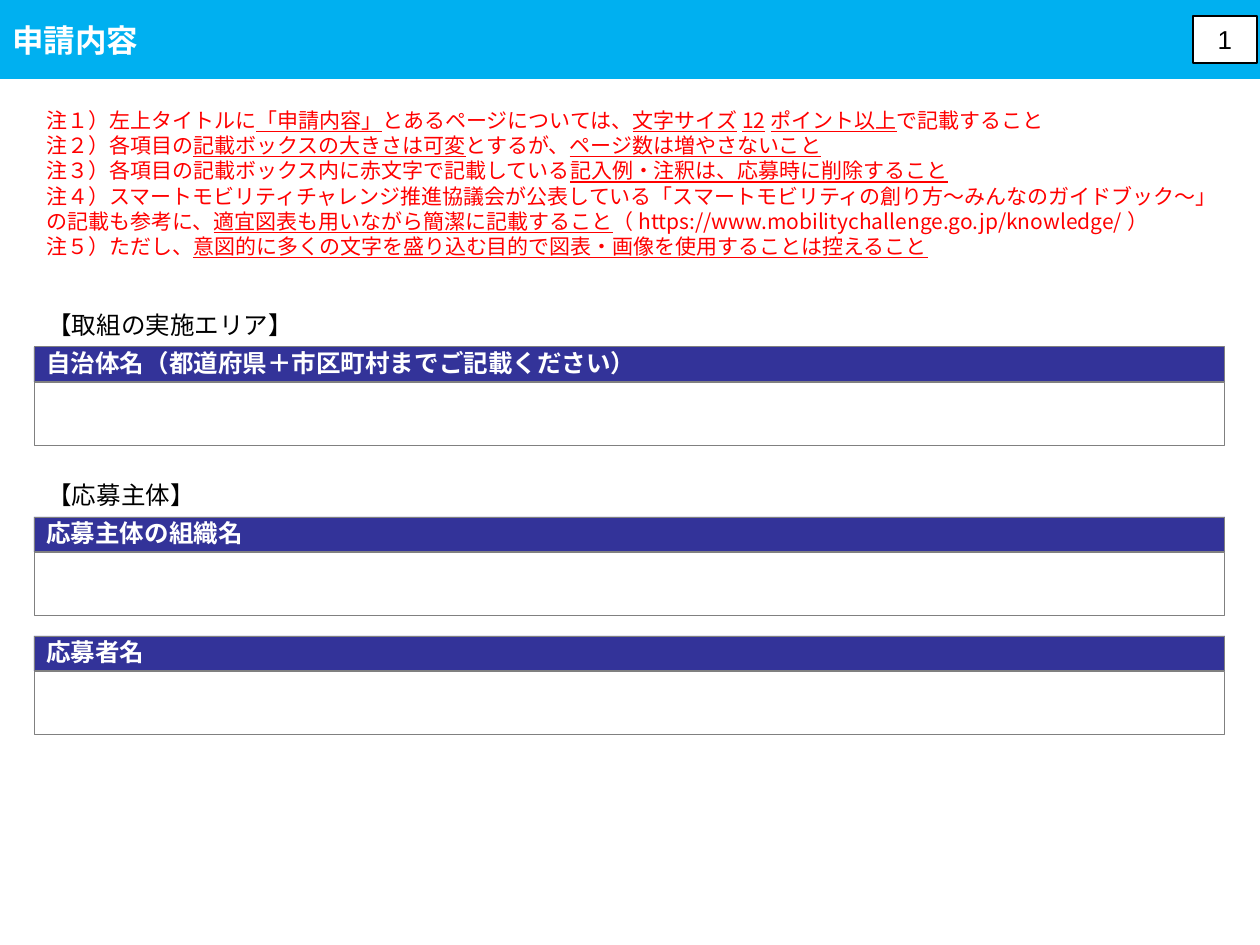
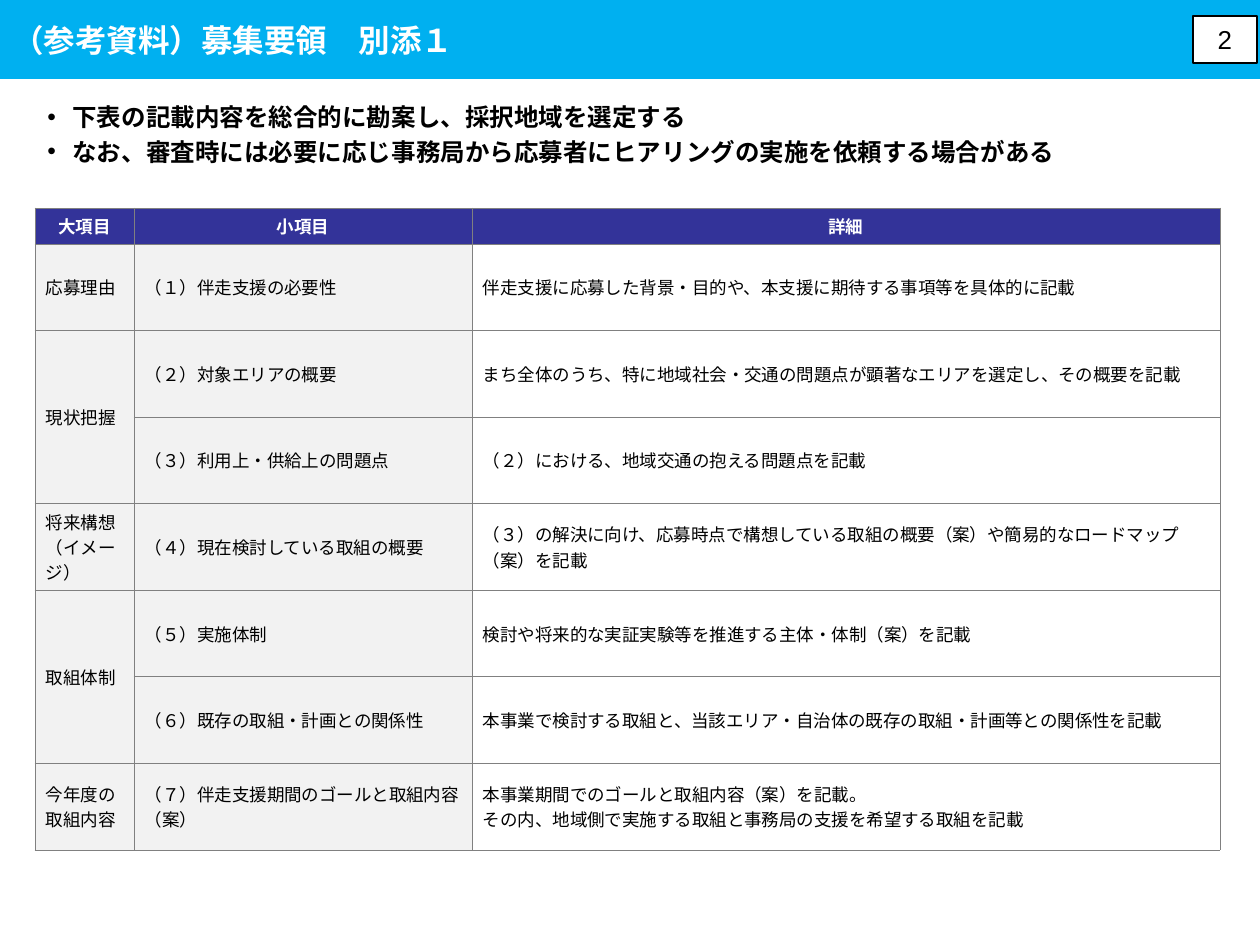
from lxml import etree
from pptx import Presentation
from pptx.dml.color import RGBColor
from pptx.enum.lang import MSO_LANGUAGE_ID
from pptx.enum.shapes import MSO_SHAPE
from pptx.enum.text import MSO_ANCHOR, PP_ALIGN
from pptx.oxml.ns import qn
from pptx.util import Pt

RECTANGLE = MSO_SHAPE.RECTANGLE
TOP, MIDDLE = MSO_ANCHOR.TOP, MSO_ANCHOR.MIDDLE
LEFT, CENTER = PP_ALIGN.LEFT, PP_ALIGN.CENTER
JAPANESE = MSO_LANGUAGE_ID.JAPANESE

PX_PER_INCH = 126
SLIDE_WIDTH, SLIDE_HEIGHT = 1260, 945
GOTHIC, ARIAL = "Noto Sans CJK JP", "Arial"
COLORS = {
    "band": "00B0F0",
    "heading": "333399",
    "label": "F2F2F2",
    "border": "808080",
    "note": "FF0000",
    "white": "FFFFFF",
    "black": "000000",
}

# Text between bars is underlined
NOTES = [
    "注１）左上タイトルに|「申請内容」|とあるページについては、|文字サイズ12ポイント以上|で記載すること",
    "注２）各項目の|記載ボックスの大きさは可変|とするが、|ページ数は増やさないこと|",
    "注３）各項目の記載ボックス内に赤文字で記載している|記入例・注釈は、応募時に削除すること|",
    "注４）スマートモビリティチャレンジ推進協議会が公表している「スマートモビリティの創り方～みんなのガイドブック～」"
    "の記載も参考に、|適宜図表も用いながら簡潔に記載すること|（https://www.mobilitychallenge.go.jp/knowledge/）",
    "注５）ただし、|意図的に多くの文字を盛り込む目的で図表・画像を使用することは控えること|",
]
# Section top, section label, headings of its entry boxes
SECTIONS = [
    (304, "【取組の実施エリア】", ["自治体名（都道府県＋市区町村までご記載ください）"]),
    (474, "【応募主体】", ["応募主体の組織名", "応募者名"]),
]
SELECTION_POINTS = [
    "下表の記載内容を総合的に勘案し、採択地域を選定する",
    "なお、審査時には必要に応じ事務局から応募者にヒアリングの実施を依頼する場合がある",
]
# An empty category continues the one above; each cell is a list of paragraphs
CRITERIA = [
    (["大項目"], ["小項目"], ["詳細"]),
    (["応募理由"], ["（１）伴走支援の必要性"],
     ["伴走支援に応募した背景・目的や、本支援に期待する事項等を具体的に記載"]),
    (["現状把握"], ["（２）対象エリアの概要"],
     ["まち全体のうち、特に地域社会・交通の問題点が顕著なエリアを選定し、その概要を記載"]),
    ([], ["（３）利用上・供給上の問題点"], ["（２）における、地域交通の抱える問題点を記載"]),
    (["将来構想\n（イメージ）"], ["（４）現在検討している取組の概要"],
     ["（３）の解決に向け、応募時点で構想している取組の概要（案）や簡易的なロードマップ（案）を記載"]),
    (["取組体制"], ["（５）実施体制"], ["検討や将来的な実証実験等を推進する主体・体制（案）を記載"]),
    ([], ["（６）既存の取組・計画との関係性"],
     ["本事業で検討する取組と、当該エリア・自治体の既存の取組・計画等との関係性を記載"]),
    (["今年度の取組内容"], ["（７）伴走支援期間のゴールと取組内容（案）"],
     ["本事業期間でのゴールと取組内容（案）を記載。",
      "その内、地域側で実施する取組と事務局の支援を希望する取組を記載"]),
]


def px(length):
    return round(length * 914400 / PX_PER_INCH)


def rgb(name):
    return RGBColor.from_string(COLORS[name])


def add_run(paragraph, text, size, color, font_name, bold, underline):
    run = paragraph.add_run()
    run.text = text
    font = run.font
    font.size, font.name, font.bold = Pt(size), font_name, bold
    font.color.rgb = rgb(color)
    font.language_id = JAPANESE
    if underline:
        font.underline = True
    east_asian = etree.Element(qn("a:ea"), typeface=font_name)
    run.font._element.find(qn("a:latin")).addnext(east_asian)


def write(frame, lines, size, color="black", font_name=GOTHIC, bold=False,
          align=LEFT, line_points=None):
    """Fill a text frame, one paragraph a line."""
    for index, line in enumerate(lines):
        paragraph = frame.add_paragraph() if index else frame.paragraphs[0]
        paragraph.alignment = align
        if line_points:
            paragraph.line_spacing = Pt(line_points)
        for part_index, part in enumerate(line.split("|")):
            for row_index, row in enumerate(part.split("\n")):
                if row_index:
                    paragraph.add_line_break()
                if row:
                    add_run(paragraph, row, size, color, font_name, bold, part_index % 2)


def add_box(slide, box, fill=None, line=None, line_width=0.5):
    shape = slide.shapes.add_shape(RECTANGLE, *map(px, box))
    shape.shadow.inherit = False
    if fill:
        shape.fill.solid()
        shape.fill.fore_color.rgb = rgb(fill)
    else:
        shape.fill.background()
    if line:
        shape.line.color.rgb = rgb(line)
        shape.line.width = Pt(line_width)
    else:
        shape.line.fill.background()
    shape.text_frame.word_wrap = True
    shape.text_frame.vertical_anchor = MIDDLE
    return shape.text_frame


def add_text(slide, box, anchor=TOP):
    frame = slide.shapes.add_textbox(*map(px, box)).text_frame
    frame.word_wrap = True
    frame.vertical_anchor = anchor
    return frame


def add_header(slide, title, number):
    """Title band with the page number at its right end."""
    band = add_box(slide, (0, 0, SLIDE_WIDTH, 79), "band")
    write(band, [title], 18, "white", bold=True)
    page = add_box(slide, (SLIDE_WIDTH - 67, 16, 64, 47), "white", "black", 0.75)
    write(page, [str(number)], 14.8, font_name=ARIAL, align=CENTER)


def add_entry(slide, left, top, width, heading):
    """Heading bar over an empty box to fill in."""
    bar_height, entry_height = 35, 64
    bar = add_box(slide, (left, top, width, bar_height), "heading", "border")
    write(bar, [heading], 14, "white", bold=True, line_points=15)
    add_box(slide, (left, top + bar_height, width, entry_height), line="border")


def add_section(slide, left, top, width, label, headings):
    label_height, entry_pitch = 43, 119
    write(add_text(slide, (left + 1, top, 840, label_height)), [label], 14, font_name=ARIAL)
    for index, heading in enumerate(headings):
        add_entry(slide, left, top + label_height + index * entry_pitch, width, heading)


def add_bullets(slide, box, lines):
    frame = add_text(slide, box)
    write(frame, lines, 14, font_name=ARIAL, bold=True)
    for index, paragraph in enumerate(frame.paragraphs):
        if index:
            paragraph.space_before = Pt(2.8)
        properties = paragraph._p.get_or_add_pPr()
        properties.set("marL", str(px(25)))
        properties.set("indent", str(-px(25)))
        etree.SubElement(properties, qn("a:buFont"), typeface=ARIAL)
        etree.SubElement(properties, qn("a:buChar"), char="•")


def style_cell(cell, fill, right_margin):
    cell.margin_left, cell.margin_right = px(11), px(right_margin)
    cell.margin_top = cell.margin_bottom = px(5)
    cell.vertical_anchor = MIDDLE
    properties = cell._tc.get_or_add_tcPr()
    for side in ("a:lnL", "a:lnR", "a:lnT", "a:lnB"):
        line = etree.SubElement(properties, qn(side), w=str(Pt(0.5)))
        solid = etree.SubElement(line, qn("a:solidFill"))
        etree.SubElement(solid, qn("a:srgbClr"), val=COLORS["border"])
    cell.fill.solid()
    cell.fill.fore_color.rgb = rgb(fill)


def add_criteria_table(slide, box, column_widths, header_height):
    table = slide.shapes.add_table(len(CRITERIA), len(column_widths), *map(px, box)).table
    for column, width in zip(table.columns, column_widths):
        column.width = px(width)
    body_height = (box[3] - header_height) / (len(CRITERIA) - 1)
    for row_index, texts in enumerate(CRITERIA):
        is_header = row_index == 0
        table.rows[row_index].height = px(header_height if is_header else body_height)
        for column_index, lines in enumerate(texts):
            cell = table.cell(row_index, column_index)
            fill = "heading" if is_header else ("label", "label", "white")[column_index]
            style_cell(cell, fill, 0 if column_index == 1 and not is_header else 11)
            write(cell.text_frame, lines, 10, "white" if is_header else "black",
                  bold=is_header, align=CENTER if is_header else LEFT)
        if not texts[0]:
            table.cell(row_index - 1, 0).merge(table.cell(row_index, 0))


def build_application(slide, number):
    add_header(slide, "申請内容", number)
    notes = add_text(slide, (34, 93, 1207, 180), MIDDLE)
    write(notes, NOTES, 12, "note", line_points=14.4)
    for top, label, headings in SECTIONS:
        add_section(slide, 34, top, 1191, label, headings)


def build_reference(slide, number):
    add_bullets(slide, (35, 96, 1191, 79), SELECTION_POINTS)
    add_criteria_table(slide, (35, 208, 1185, 642), (99, 338, 748), 36)
    add_header(slide, "（参考資料）募集要領　別添１", number)


def main():
    presentation = Presentation()
    presentation.slide_width, presentation.slide_height = px(SLIDE_WIDTH), px(SLIDE_HEIGHT)
    blank = presentation.slide_layouts[6]
    for number, build in enumerate((build_application, build_reference), 1):
        build(presentation.slides.add_slide(blank), number)
    presentation.save("out.pptx")


if __name__ == "__main__":
    main()
